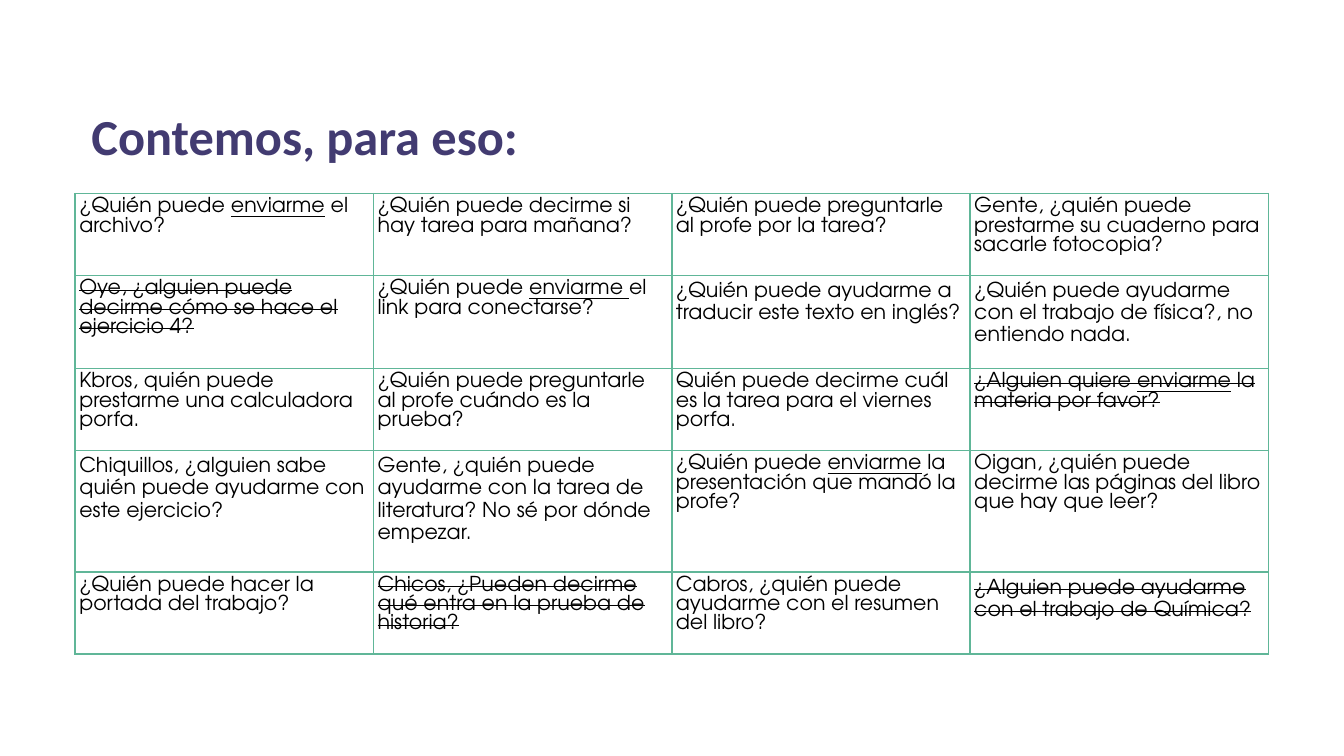
import pptx
import pptx.dml.color
import pptx.enum.text
import pptx.oxml.ns
import pptx.util
from lxml import etree

PURPLE = pptx.dml.color.RGBColor(0x42, 0x3B, 0x71)
GREEN = pptx.dml.color.RGBColor(0x60, 0xB6, 0x98)
BLACK = pptx.dml.color.RGBColor(0, 0, 0)

# 16:9 slide
WIDTH = 10
HEIGHT = WIDTH * 9 / 16
TITLE_FONT = {"name": "Calibri", "size": pptx.util.Pt(27), "bold": True}
CELL_FONT = {"name": "TeX Gyre Adventor", "size": pptx.util.Pt(11), "bold": False}
COL_WIDTH = 2.22
ROW_HEIGHTS = [0.61, 0.69, 0.61, 0.9, 0.61]

# Underlined words stand between vertical bars
MESSAGES = [
    ["¿Quién puede |enviarme| el archivo?",
     "¿Quién puede decirme si hay tarea para mañana?",
     "¿Quién puede preguntarle al profe por la tarea?",
     "Gente, ¿quién puede prestarme su cuaderno para sacarle fotocopia?"],
    ["Oye, ¿alguien puede decirme cómo se hace el ejercicio 4?",
     "¿Quién puede |enviarme |el link para conectarse?",
     "¿Quién puede ayudarme a traducir este texto en inglés?",
     "¿Quién puede ayudarme con el trabajo de física?, no entiendo nada."],
    ["Kbros, quién puede prestarme una calculadora porfa.",
     "¿Quién puede preguntarle al profe cuándo es la prueba?",
     "Quién puede decirme cuál es la tarea para el viernes porfa.",
     "¿Alguien quiere |enviarme| la materia por favor?"],
    ["Chiquillos, ¿alguien sabe quién puede ayudarme con este ejercicio?",
     "Gente, ¿quién puede ayudarme con la tarea de literatura? No sé por dónde empezar.",
     "¿Quién puede |enviarme| la presentación que mandó la profe?",
     "Oigan, ¿quién puede decirme las páginas del libro que hay que leer?"],
    ["¿Quién puede hacer la portada del trabajo?",
     "Chicos, ¿Pueden decirme qué entra en la prueba de historia?",
     "Cabros, ¿quién puede ayudarme con el resumen del libro?",
     "¿Alguien puede ayudarme con el trabajo de Química?"],
]
# (row, column) of the crossed-out and the wider-spaced messages
STRUCK = {(1, 0), (2, 3), (4, 1), (4, 3)}
LOOSE = {(1, 2), (1, 3), (3, 0), (3, 1), (4, 3)}


def set_all(obj, values):
    for name, value in values.items():
        setattr(obj, name, value)


def margins(side, top):
    side, top = pptx.util.Inches(side), pptx.util.Inches(top)
    return {"margin_left": side, "margin_right": side,
            "margin_top": top, "margin_bottom": top}


def add_run(p, text, font, color):
    r = p.add_run()
    r.text = text
    set_all(r.font, font)
    r.font.color.rgb = color
    return r


def add_title(s, box, text):
    sp = s.shapes.add_textbox(*map(pptx.util.Inches, box))
    tf = sp.text_frame
    set_all(tf, {"word_wrap": True, **margins(0.07, 0.04)})
    add_run(tf.paragraphs[0], text, TITLE_FONT, PURPLE)


def add_borders(cell):
    tc_pr = cell._tc.get_or_add_tcPr()
    for side in ("lnL", "lnR", "lnT", "lnB"):
        ln = etree.SubElement(tc_pr, pptx.oxml.ns.qn(f"a:{side}"), w=str(pptx.util.Pt(1)))
        fill = etree.SubElement(ln, pptx.oxml.ns.qn("a:solidFill"))
        etree.SubElement(fill, pptx.oxml.ns.qn("a:srgbClr"), val=str(GREEN))


def fill_cell(cell, text, struck, loose):
    set_all(cell, {"vertical_anchor": pptx.enum.text.MSO_ANCHOR.TOP, **margins(0.03, 0.03)})
    add_borders(cell)
    cell.fill.background()
    p = cell.text_frame.paragraphs[0]
    if loose:
        p.line_spacing = 1.15
    for i, part in enumerate(text.split("|")):
        r = add_run(p, part, {**CELL_FONT, "underline": i % 2 == 1}, BLACK)
        if struck:
            r._r.get_or_add_rPr().set("strike", "sngStrike")


def add_messages(s, left, top):
    cols = len(MESSAGES[0])
    box = (left, top, cols * COL_WIDTH, sum(ROW_HEIGHTS))
    table = s.shapes.add_table(len(MESSAGES), cols, *map(pptx.util.Inches, box)).table
    set_all(table, {"first_row": False, "horz_banding": False})
    for col in table.columns:
        col.width = pptx.util.Inches(COL_WIDTH)
    for i, (height, texts) in enumerate(zip(ROW_HEIGHTS, MESSAGES)):
        table.rows[i].height = pptx.util.Inches(height)
        for j, text in enumerate(texts):
            fill_cell(table.cell(i, j), text, (i, j) in STRUCK, (i, j) in LOOSE)


def main():
    prs = pptx.Presentation()
    prs.slide_width = pptx.util.Inches(WIDTH)
    prs.slide_height = pptx.util.Inches(HEIGHT)
    s = prs.slides.add_slide(prs.slide_layouts[6])
    add_title(s, (0.61, 0.74, 6.71, 0.53), "Contemos, para eso:")
    add_messages(s, 0.56, 1.44)
    prs.save("out.pptx")


if __name__ == "__main__":
    main()
